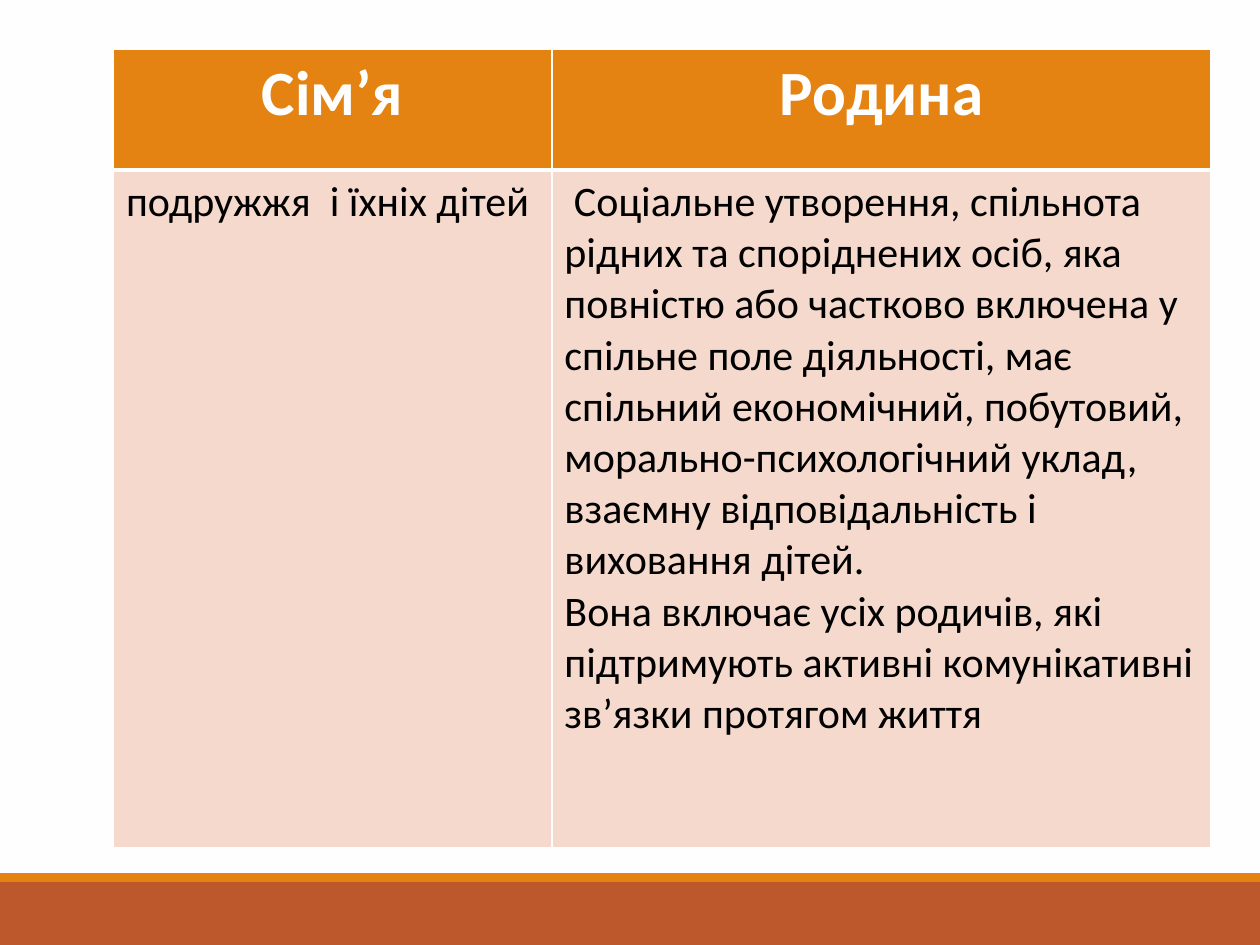
import pptx
import pptx.dml.color
import pptx.enum.shapes
import pptx.enum.text
import pptx.oxml
import pptx.oxml.ns
import pptx.util

Inches = pptx.util.Inches
Pt = pptx.util.Pt
ALIGN = pptx.enum.text.PP_ALIGN
WHITE, BLACK, ORANGE, RUST, BLUSH = "FFFEFF", "000000", "E48312", "BD582C", "F5D9CC"
HEADERS = ["Сім’я", "Родина"]
BODY = [
    ["подружжя  і їхніх дітей"],
    [
        " Соціальне утворення, спільнота рідних та споріднених осіб, яка "
        "повністю або частково включена у спільне поле діяльності, має "
        "спільний економічний, побутовий, морально-психологічний уклад, "
        "взаємну відповідальність і виховання дітей.",
        "Вона включає усіх родичів, які підтримують активні "
        "комунікативні зв’язки протягом життя",
    ],
]


def rgb(value):
    """Turn a hex string into a colour."""
    return pptx.dml.color.RGBColor.from_string(value)


def paint(fill, color):
    """Make a fill solid in the given colour."""
    fill.solid()
    fill.fore_color.rgb = rgb(color)


class SlideBuilder:
    """Hold the text styles and the current slide."""

    header = {"size": Pt(36), "bold": True, "name": "Calibri"}
    body = {"size": Pt(24), "bold": False, "name": "Calibri"}

    def __init__(self, prs):
        """Add a blank slide with the background colour."""
        self.s = prs.slides.add_slide(prs.slide_layouts[6])
        paint(self.s.background.fill, WHITE)

    def band(self, top, height, color):
        """Draw a full-width band."""
        sp = self.s.shapes.add_shape(
            pptx.enum.shapes.MSO_SHAPE.RECTANGLE,
            0, Inches(top), Inches(10), Inches(height))
        sp.shadow.inherit = False
        sp.line.fill.background()
        paint(sp.fill, color)

    def border(self, cell, side, width):
        """Add a solid border to one side of a cell."""
        ln = pptx.oxml.parse_xml(
            f'<a:{side} {pptx.oxml.ns.nsdecls("a")} w="{Pt(width)}"><a:solidFill>'
            f'<a:srgbClr val="{WHITE}"/></a:solidFill></a:{side}>')
        cell._tc.get_or_add_tcPr().append(ln)

    def cell(self, cell, texts, style, color, fill, align, widths):
        """Fill a cell with formatted paragraphs and borders."""
        for side, width in widths.items():
            self.border(cell, side, width)
        paint(cell.fill, fill)
        tf = cell.text_frame
        for i, text in enumerate(texts):
            p = tf.add_paragraph() if i else tf.paragraphs[0]
            p.alignment = align
            r = p.add_run()
            r.text = text
            r.font.color.rgb = rgb(color)
            for name, value in style.items():
                setattr(r.font, name, value)

    def table(self, left, top, cols, rows):
        """Add the comparison table with a header row and a body row."""
        table = self.s.shapes.add_table(
            len(rows), len(cols), Inches(left), Inches(top),
            Inches(sum(cols)), Inches(sum(rows))).table
        for col, width in zip(table.columns, cols):
            col.width = Inches(width)
        for row, height in zip(table.rows, rows):
            row.height = Inches(height)
        thin = {"lnL": 1, "lnR": 1, "lnT": 1, "lnB": 1}
        for i, (header, texts) in enumerate(zip(HEADERS, BODY)):
            self.cell(table.cell(0, i), [header], self.header, WHITE, ORANGE,
                      ALIGN.CENTER, {**thin, "lnB": 3})
            self.cell(table.cell(1, i), texts, self.body, BLACK, BLUSH,
                      ALIGN.LEFT, {**thin, "lnT": 3})


def main():
    """Build and save the slide."""
    prs = pptx.Presentation()
    prs.slide_width, prs.slide_height = Inches(10), Inches(7.5)
    slide = SlideBuilder(prs)
    slide.band(7, 0.5, RUST)
    slide.band(6.93, 0.07, ORANGE)
    slide.table(0.9, 0.39, [3.48, 5.23], [0.96, 5.38])
    prs.save("out.pptx")


if __name__ == "__main__":
    main()
